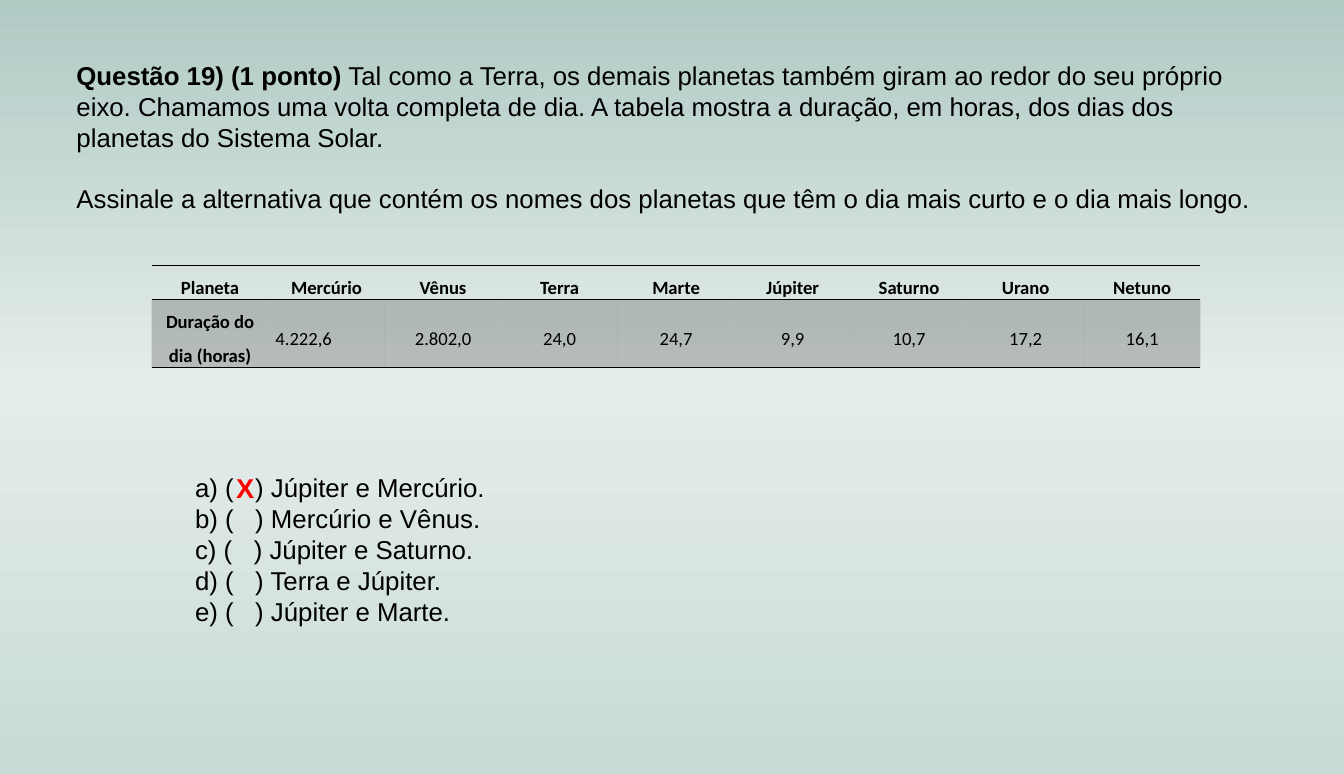
"""Build the quiz slide about the length of the day on each planet."""
import lxml.etree
import pptx
import pptx.dml.color
import pptx.enum.text
import pptx.oxml.ns
import pptx.util

COLORS = {"text": "000000", "answer": "FF0000", "sky": "B0CAC4",
          "mist": "E5EDEB", "ground": "CADCD8"}
LEFT = pptx.enum.text.PP_ALIGN.LEFT
CENTER = pptx.enum.text.PP_ALIGN.CENTER
MIDDLE = pptx.enum.text.MSO_ANCHOR.MIDDLE
TOP = pptx.enum.text.MSO_ANCHOR.TOP
NO_GRID_STYLE = "{2D5ABB26-0587-4C30-8999-92F81FD0307C}"

LEAD = "Questão 19) (1 ponto)"
STATEMENT = (" Tal como a Terra, os demais planetas também giram ao redor do seu próprio "
             "eixo. Chamamos uma volta completa de dia. A tabela mostra a duração, em horas, "
             "dos dias dos planetas do Sistema Solar.")
TASK = ("Assinale a alternativa que contém os nomes dos planetas que têm o dia mais curto "
        "e o dia mais longo.")
DAYS = [
    ["Planeta", "Mercúrio", "Vênus", "Terra", "Marte", "Júpiter", "Saturno", "Urano", "Netuno"],
    ["Duração do\ndia (horas)", "4.222,6", "2.802,0", "24,0", "24,7", "9,9", "10,7", "17,2", "16,1"],
]
OPTIONS = {"a": "Júpiter e Mercúrio.", "b": "Mercúrio e Vênus.", "c": "Júpiter e Saturno.",
           "d": "Terra e Júpiter.", "e": "Júpiter e Marte."}


def child(parent, tag, **attributes):
    return lxml.etree.SubElement(parent, pptx.oxml.ns.qn(tag), attributes)


class QuizSlide:
    """Hold the style and the slide, placing elements in percent of its size."""

    def __init__(self, deck):
        self.width, self.height = deck.slide_width, deck.slide_height
        self.slide = deck.slides.add_slide(deck.slide_layouts[1])

    def area(self, left, top, width, height):
        return (int(self.width * left / 100), int(self.height * top / 100),
                int(self.width * width / 100), int(self.height * height / 100))

    def background(self, stops):
        fill = self.slide.background.fill
        fill.gradient()
        fill.gradient_angle = 270
        stop_list = next(self.slide.element.iter(pptx.oxml.ns.qn("a:gsLst")))
        for stop in list(stop_list):
            stop_list.remove(stop)
        for percent, color in stops:
            stop = child(stop_list, "a:gs", pos=str(percent * 1000))
            child(stop, "a:srgbClr", val=COLORS[color])

    def format(self, paragraph, size, color="text", bold=False, font="Arial", align=LEFT):
        paragraph.alignment = align
        for run in paragraph.runs:
            run.font.name, run.font.size, run.font.bold = font, pptx.util.Pt(size), bold
            run.font.color.rgb = pptx.dml.color.RGBColor.from_string(COLORS[color])

    def place(self, holder, area, anchor):
        holder.left, holder.top, holder.width, holder.height = self.area(*area)
        frame = holder.text_frame
        frame.word_wrap = True
        frame.auto_size = pptx.enum.text.MSO_AUTO_SIZE.NONE
        frame.vertical_anchor = anchor
        return frame

    def question(self, area, lead, statement, task):
        frame = self.place(self.slide.shapes.title, area, MIDDLE)
        frame.text = f"{lead}\n{task}"
        opening, closing = frame.paragraphs
        opening.add_run().text = statement
        for paragraph in frame.paragraphs:
            self.format(paragraph, 18)
        opening.runs[0].font.bold = True
        closing.space_before = pptx.util.Pt(20.7)

    def options(self, area, lines):
        frame = self.place(self.slide.placeholders[1], area, TOP)
        frame.text = "\n".join(lines)
        for paragraph in frame.paragraphs:
            properties = paragraph._p.get_or_add_pPr()
            properties.set("marL", "0")
            properties.set("indent", "0")
            child(properties, "a:buNone")
            paragraph.space_before = pptx.util.Pt(0)
            self.format(paragraph, 18)

    def mark(self, area, text):
        frame = self.place(self.slide.shapes.add_textbox(*self.area(*area)), area, TOP)
        frame.text = text
        self.format(frame.paragraphs[0], 19, "answer", bold=True)

    def rule(self, cell, side):
        line = lxml.etree.Element(pptx.oxml.ns.qn(side), w=str(pptx.util.Pt(1)))
        child(child(line, "a:solidFill"), "a:srgbClr", val=COLORS["text"])
        cell._tc.get_or_add_tcPr().insert(0, line)

    def shade(self, cell, percent):
        cell.fill.solid()
        cell.fill.fore_color.rgb = pptx.dml.color.RGBColor.from_string(COLORS["text"])
        tint = next(cell._tc.tcPr.iter(pptx.oxml.ns.qn("a:srgbClr")))
        child(tint, "a:alpha", val=str(percent * 1000))

    def table(self, area, rows, row_heights):
        graphic = self.slide.shapes.add_table(len(rows), len(rows[0]), *self.area(*area))
        table = graphic.table
        table.first_row = table.horz_banding = False
        next(table._tbl.iter(pptx.oxml.ns.qn("a:tableStyleId"))).text = NO_GRID_STYLE
        for r, (texts, height) in enumerate(zip(rows, row_heights)):
            table.rows[r].height = int(self.height * height / 100)
            for c, text in enumerate(texts):
                cell = table.cell(r, c)
                cell.text = text
                cell.margin_left = cell.margin_right = pptx.util.Inches(0.07)
                cell.margin_top = cell.margin_bottom = 0
                cell.vertical_anchor = MIDDLE if r else TOP
                for paragraph in cell.text_frame.paragraphs:
                    paragraph.line_spacing = 1.5
                    self.format(paragraph, 13, bold=r == 0 or c == 0, font="Calibri",
                                align=LEFT if (r, c) == (1, 1) else CENTER)
                if r:
                    self.shade(cell, 20)
                else:
                    cell.fill.background()
                self.rule(cell, "a:lnB")
                self.rule(cell, "a:lnT")


def main():
    deck = pptx.Presentation()
    deck.slide_width, deck.slide_height = pptx.util.Inches(13.02), pptx.util.Inches(7.5)
    quiz = QuizSlide(deck)
    quiz.background([(0, "sky"), (50, "mist"), (98, "ground")])
    quiz.question((4.92, 6.93, 90.02, 21.47), LEAD, STATEMENT, TASK)
    quiz.table((11.29, 34.27, 78.03, 12.53), DAYS, (4, 8.53))
    quiz.options((13.75, 60.27, 75.5, 21.6),
                 [f"{letter}) (   ) {planets}" for letter, planets in OPTIONS.items()])
    quiz.mark((16.82, 60.27, 3, 5.6), "X")
    deck.save("out.pptx")


if __name__ == "__main__":
    main()
